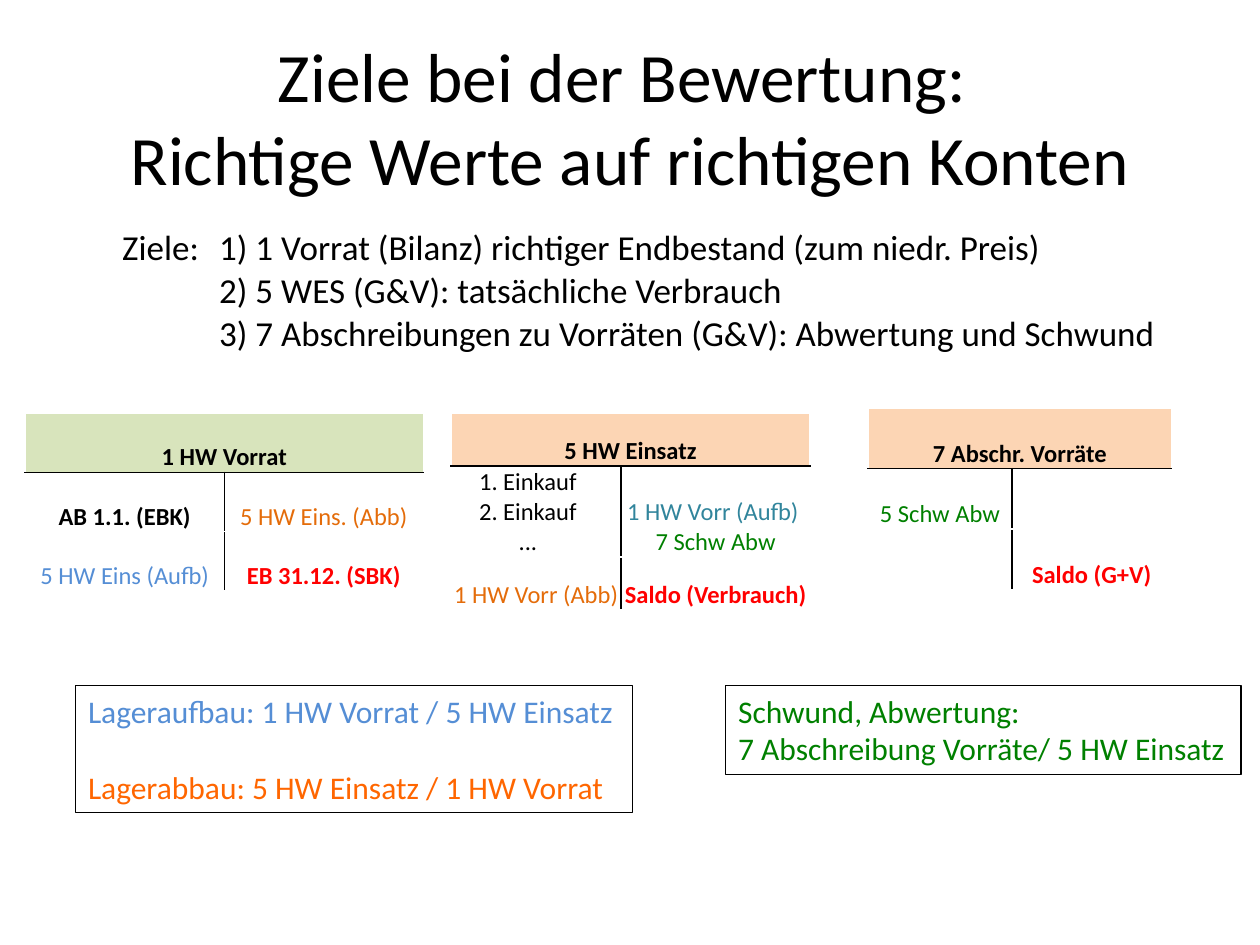
from lxml import etree
from pptx import Presentation
from pptx import util as u
from pptx.dml.color import RGBColor
from pptx.enum import shapes, text
from pptx.oxml.ns import qn

FONT = "Calibri"
BLACK, RED, GREEN = "000000", "FF0000", "008000"
BLUE, TEAL, ORANGE = "558ED5", "31859C", "E46C0A"
BRIGHT_ORANGE = "FF6600"
BALANCE_FILL, EXPENSE_FILL = "D8E4BC", "FCD5B4"


def colour(value):
    return RGBColor.from_string(value)


def format_para(para, size, hex_colour=BLACK, bold=False, align=text.PP_ALIGN.LEFT):
    para.alignment = align
    for span in para.runs:
        span.font.name = FONT
        span.font.size = u.Pt(size)
        span.font.bold = bold
        span.font.color.rgb = colour(hex_colour)


def add_title(page, title):
    holder = page.shapes.title
    holder.left, holder.top = u.Inches(0.5), u.Inches(0.3)
    holder.width, holder.height = u.Inches(9), u.Inches(1.25)
    holder.text_frame.text = title
    holder.text_frame.vertical_anchor = text.MSO_ANCHOR.MIDDLE
    format_para(holder.text_frame.paragraphs[0], 39.6, align=text.PP_ALIGN.CENTER)


def add_plain_table(page, left, top, widths, heights, margin):
    """Add a table without style banding, fills or wide margins."""
    frame = page.shapes.add_table(
        len(heights), len(widths), u.Inches(left), u.Inches(top),
        u.Inches(sum(widths)), u.Inches(sum(heights)))
    table = frame.table
    table.first_row = table.horz_banding = False
    for column, width in zip(table.columns, widths):
        column.width = u.Inches(width)
    for row, height in zip(table.rows, heights):
        row.height = u.Inches(height)
    for cell in table.iter_cells():
        cell.margin_left = cell.margin_right = cell.margin_top = u.Inches(margin)
        cell.margin_bottom = 0
        cell.vertical_anchor = text.MSO_ANCHOR.BOTTOM
        cell.fill.background()
    return table


def add_borders(cell, sides):
    """Draw black 1 pt lines; sides are given in the order L, R, T, B."""
    properties = cell._tc.get_or_add_tcPr()
    for position, side in enumerate(sides):
        line = etree.Element(qn(f"a:ln{side}"), w=str(u.Pt(1)))
        fill = etree.SubElement(line, qn("a:solidFill"))
        etree.SubElement(fill, qn("a:srgbClr"), val=BLACK)
        properties.insert(position, line)


def fill_cell(cell, entries):
    """Write centred entries of (wording, colour, bold)."""
    cell.text_frame.text = "\n".join(wording for wording, _, _ in entries)
    for para, (_, hex_colour, bold) in zip(cell.text_frame.paragraphs, entries):
        format_para(para, 14, hex_colour, bold, text.PP_ALIGN.CENTER)


def add_account(page, left, top, widths, heights, heading, fill, rows):
    """Add a T-account: heading over a debit and a credit column."""
    table = add_plain_table(page, left, top, widths, heights, 0.01)
    header = table.cell(0, 0)
    header.merge(table.cell(0, 1))
    fill_cell(header, [(heading, BLACK, True)])
    for column in range(2):
        add_borders(table.cell(0, column), "B")
    header.fill.solid()
    header.fill.fore_color.rgb = colour(fill)
    for row, sides in enumerate(rows, start=1):
        for column, entries in enumerate(sides):
            cell = table.cell(row, column)
            if entries:
                fill_cell(cell, entries)
            add_borders(cell, "RL"[column] + ("T" if row == 1 else ""))
    return table


def add_goals(page, goals):
    table = add_plain_table(
        page, 0.97, 1.8, [0.77, 4.05, 1.32, 1.32, 1.32], [0.34] * 3, 0)
    label = table.cell(0, 0)
    label.text_frame.text = "Ziele:"
    format_para(label.text_frame.paragraphs[0], 20)
    for row, (goal, last_column) in enumerate(goals):
        cell = table.cell(row, 1)
        cell.merge(table.cell(row, last_column))
        cell.text_frame.text = goal
        format_para(cell.text_frame.paragraphs[0], 20)


def add_entry_box(page, left, top, width, height, lines, gap=0):
    """Add an outlined box of booking entries (wording, colour)."""
    box = page.shapes.add_shape(
        shapes.MSO_SHAPE.RECTANGLE, u.Inches(left), u.Inches(top),
        u.Inches(width), u.Inches(height))
    box.shadow.inherit = False
    box.fill.background()
    box.line.color.rgb = colour(BLACK)
    box.line.width = u.Pt(0.75)
    frame = box.text_frame
    frame.word_wrap = True
    frame.vertical_anchor = text.MSO_ANCHOR.TOP
    frame.text = "\n".join(wording for wording, _ in lines)
    for para, (_, hex_colour) in zip(frame.paragraphs, lines):
        format_para(para, 18, hex_colour)
    for para in frame.paragraphs[1:]:
        para.space_before = u.Pt(gap)


def main():
    deck = Presentation()
    deck.slide_width, deck.slide_height = u.Inches(10), u.Inches(7.5)
    page = deck.slides.add_slide(deck.slide_layouts[5])
    add_title(page, "Ziele bei der Bewertung: \vRichtige Werte auf richtigen Konten")

    # Goals with the last column each one spans
    add_goals(page, [
        ("1) 1 Vorrat (Bilanz) richtiger Endbestand (zum niedr. Preis)", 4),
        ("2) 5 WES (G&V): tatsächliche Verbrauch", 3),
        ("3) 7 Abschreibungen zu Vorräten (G&V): Abwertung und Schwund", 4),
    ])

    # T-accounts
    add_account(page, 0.2, 3.28, [1.58, 1.58], [0.47] * 3, "1 HW Vorrat", BALANCE_FILL, [
        ([("AB 1.1. (EBK)", BLACK, True)], [("5 HW Eins. (Abb)", ORANGE, False)]),
        ([("5 HW Eins (Aufb)", BLUE, False)], [("EB 31.12. (SBK)", RED, True)]),
    ])
    usage = add_account(
        page, 3.58, 3.28, [1.35, 1.5], [0.42, 0.71, 0.42], "5 HW Einsatz", EXPENSE_FILL, [
            ([("1. Einkauf", BLACK, False), ("2. Einkauf", BLACK, False),
              ("...", BLACK, False)],
             [("1 HW Vorr (Aufb) ", TEAL, False), ("7 Schw Abw", GREEN, False)]),
            ([("1 HW Vorr (Abb) ", ORANGE, False)], [("Saldo (Verbrauch)", RED, True)]),
        ])
    # The first purchase sits slightly left of centre
    first_purchase = usage.cell(1, 0).text_frame.paragraphs[0]
    first_purchase._p.get_or_add_pPr().set("marR", str(u.Inches(0.13)))
    add_account(page, 6.89, 3.24, [1.14, 1.27], [0.48] * 3, "7 Abschr. Vorräte", EXPENSE_FILL, [
        ([("5 Schw Abw", GREEN, False)], []),
        ([], [("Saldo (G+V)", RED, True)]),
    ])

    # Booking entries
    add_entry_box(page, 0.6, 5.44, 4.42, 1.01, [
        ("Lageraufbau: 1 HW Vorrat / 5 HW Einsatz", BLUE),
        ("Lagerabbau: 5 HW Einsatz / 1 HW Vorrat", BRIGHT_ORANGE),
    ], gap=22)
    add_entry_box(page, 5.76, 5.44, 4.09, 0.71, [
        ("Schwund, Abwertung:", GREEN),
        ("7 Abschreibung Vorräte/ 5 HW Einsatz", GREEN),
    ])
    deck.save("out.pptx")


if __name__ == "__main__":
    main()
